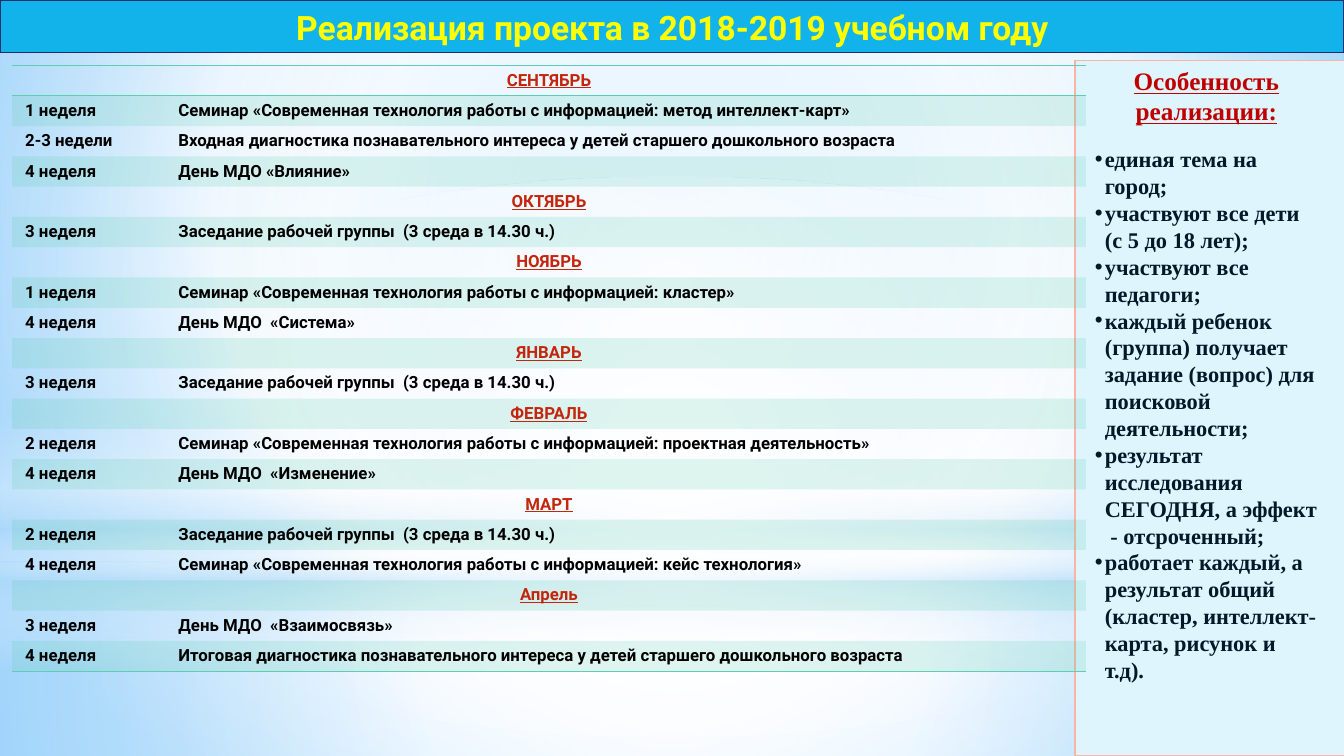
from dataclasses import dataclass

from lxml import etree
from pptx import Presentation
from pptx import util as u
from pptx.dml import color
from pptx.enum import shapes, text
from pptx.oxml import ns


@dataclass
class Theme:
    sans: str = "Roboto"
    serif: str = "Times New Roman"
    bar: str = "12B2EB"
    edge: str = "1F2E69"
    title: str = "FFFF00"
    month: str = "C3260C"
    body: str = "000000"
    mint: str = "5DCEAF"
    side: str = "DFF5FD"
    rim: str = "F9B3A7"
    head: str = "C00000"
    note: str = "031828"
    white: str = "FFFFFF"
    haze: str = "B4DCFA"
    sky: str = "9ED5FF"
    deep: str = "5BB9FF"
    big: int = 24
    mid: int = 18
    list: int = 16
    small: int = 12


th = Theme()
rgb = color.RGBColor.from_string
A = ns.nsdecls("a")


def blend(host, stops, aim):
    gs = "".join(
        f'<a:gs pos="{pos * 1000}"><a:srgbClr val="{hue}">'
        f'<a:alpha val="{alpha * 1000}"/></a:srgbClr></a:gs>'
        for pos, hue, alpha in stops)
    if aim:
        l, t, r, b = (n * 1000 for n in aim)
        way = (f'<a:path path="circle"><a:fillToRect l="{l}" t="{t}" '
               f'r="{r}" b="{b}"/></a:path>')
    else:
        way = '<a:lin ang="5400000" scaled="0"/>'
    old = host.find(ns.qn("a:solidFill"))
    host.replace(old, etree.fromstring(
        f'<a:gradFill {A} rotWithShape="1"><a:gsLst>{gs}</a:gsLst>{way}</a:gradFill>'))


def write(para, words, font, size, hue, line=False):
    run = para.add_run()
    run.text = words
    run.font.name = font
    run.font.size = u.Pt(size)
    run.font.color.rgb = rgb(hue)
    run.font.bold = True
    run.font.underline = line


prs = Presentation()
prs.slide_width = u.Inches(13.33)
prs.slide_height = u.Inches(7.5)
slide = prs.slides.add_slide(prs.slide_layouts[6])
box = shapes.MSO_SHAPE.RECTANGLE
oval = shapes.MSO_SHAPE.OVAL

slide.background.fill.solid()
blend(slide.background._cSld.bg.bgPr,
      [(0, th.sky, 100), (60, th.white, 100), (100, th.deep, 100)], (20, 10, 20, 60))

mid = (50, 50, 50, 50)
glows = [
    (box, 5.58, 1.92, [(0, th.white, 91), (37, th.white, 76), (100, th.haze, 79)], mid),
    (box, 0, 5.58, [(0, th.white, 89), (48, th.white, 62), (100, th.haze, 79)], mid),
    (box, 4.12, 2.5, [(0, th.white, 0), (29, th.white, 30), (45, th.haze, 40),
                      (55, th.white, 26), (65, th.haze, 60), (100, th.white, 0)], None),
    (oval, 1.75, 5.58, [(0, th.white, 100), (56, th.white, 0)], mid),
]
for kind, top, high, stops, aim in glows:
    glow = slide.shapes.add_shape(kind, 0, u.Inches(top), prs.slide_width, u.Inches(high))
    glow.shadow.inherit = False
    glow.line.fill.background()
    glow.fill.solid()
    blend(glow._element.spPr, stops, aim)

panels = [
    (0, 0, 13.33, 0.52, th.bar, th.edge),
    (10.66, 0.6, 2.68, 6.9, th.side, th.rim),
]
for left, top, wide, high, fill, edge in panels:
    panel = slide.shapes.add_shape(box, u.Inches(left), u.Inches(top),
                                   u.Inches(wide), u.Inches(high))
    panel.shadow.inherit = False
    panel.fill.solid()
    panel.fill.fore_color.rgb = rgb(fill)
    panel.line.color.rgb = rgb(edge)
    panel.line.width = u.Pt(1.25)

frames = []
for left, top, wide, high in [(0.16, 0.02, 13.02, 0.51), (10.76, 0.6, 2.41, 6.56)]:
    frame = slide.shapes.add_textbox(u.Inches(left), u.Inches(top),
                                     u.Inches(wide), u.Inches(high)).text_frame
    frame.word_wrap = True
    frame.auto_size = text.MSO_AUTO_SIZE.SHAPE_TO_FIT_TEXT
    frame.paragraphs[0].alignment = text.PP_ALIGN.CENTER
    frames.append(frame)
title, side = frames

write(title.paragraphs[0], "Реализация проекта в 2018-2019 учебном году",
      th.sans, th.big, th.title)

plan = [
    ("СЕНТЯБРЬ",),
    ("1 неделя", "Семинар «Современная технология работы с информацией: метод интеллект-карт»"),
    ("2-3 недели", "Входная диагностика познавательного интереса у детей старшего дошкольного возраста"),
    ("4 неделя", "День МДО «Влияние»"),
    ("ОКТЯБРЬ",),
    ("3 неделя", "Заседание рабочей группы  (3 среда в 14.30 ч.)"),
    ("НОЯБРЬ",),
    ("1 неделя", "Семинар «Современная технология работы с информацией: кластер»"),
    ("4 неделя", "День МДО  «Система»"),
    ("ЯНВАРЬ",),
    ("3 неделя", "Заседание рабочей группы  (3 среда в 14.30 ч.)"),
    ("ФЕВРАЛЬ",),
    ("2 неделя", "Семинар «Современная технология работы с информацией: проектная деятельность»"),
    ("4 неделя", "День МДО  «Изменение»"),
    ("МАРТ",),
    ("2 неделя", "Заседание рабочей группы  (3 среда в 14.30 ч.)"),
    ("4 неделя", "Семинар «Современная технология работы с информацией: кейс технология»"),
    ("Апрель",),
    ("3 неделя", "День МДО  «Взаимосвязь»"),
    ("4 неделя", "Итоговая диагностика познавательного интереса у детей старшего дошкольного возраста"),
]
last = len(plan) - 1
rules = {0: ("lnB", "lnT"), last: ("lnB",)}
grid = slide.shapes.add_table(len(plan), 2, u.Inches(0.12), u.Inches(0.65),
                              u.Inches(10.65), u.Inches(6)).table
grid.first_row = grid.horz_banding = False
grid._tbl.tblPr[0].text = "{2D5ABB26-0587-4C30-8999-92F81FD0307C}"
grid.columns[0].width = u.Inches(1.52)
grid.columns[1].width = u.Inches(9.13)

for i, row in enumerate(plan):
    grid.rows[i].height = u.Inches(0.3)
    month = len(row) == 1
    if month:
        grid.cell(i, 0).merge(grid.cell(i, 1))
    for j in range(2):
        cell = grid.cell(i, j)
        cell.margin_left = cell.margin_right = u.Inches(0.13)
        cell.margin_top = cell.margin_bottom = u.Inches(0.05)
        if i % 2:
            cell.fill.solid()
            cell.fill.fore_color.rgb = rgb(th.mint)
            tint = cell._tc.tcPr.find(".//" + ns.qn("a:srgbClr"))
            etree.SubElement(tint, ns.qn("a:alpha")).set("val", "20000")
        else:
            cell.fill.background()
        for tag in rules.get(i, ()):
            cell._tc.tcPr.insert(0, etree.fromstring(
                f'<a:{tag} {A} w="12700"><a:solidFill><a:srgbClr val="{th.mint}"/>'
                f'</a:solidFill></a:{tag}>'))
    for j, words in enumerate(row):
        para = grid.cell(i, j).text_frame.paragraphs[0]
        if month:
            para.alignment = text.PP_ALIGN.CENTER
        write(para, words, th.sans, th.small, th.month if month else th.body, month)

head = side.paragraphs[0]
head.space_after = u.Pt(14)
write(head, "Особенность реализации:", th.serif, th.mid, th.head, True)

notes = [
    "единая тема на город;",
    "участвуют все дети (с 5 до 18 лет);",
    "участвуют все педагоги;",
    "каждый ребенок (группа) получает задание (вопрос) для поисковой деятельности;",
    "результат исследования СЕГОДНЯ, а эффект  - отсроченный;",
    "работает каждый, а результат общий (кластер, интеллект-карта, рисунок и т.д).",
]
hang = u.Inches(0.1)
for words in notes:
    para = side.add_paragraph()
    props = para._p.get_or_add_pPr()
    props.set("marL", str(hang))
    props.set("indent", str(-hang))
    etree.SubElement(props, ns.qn("a:buFont")).set("typeface", "Arial")
    etree.SubElement(props, ns.qn("a:buChar")).set("char", "•")
    write(para, words, th.serif, th.list, th.note)

prs.save("out.pptx")
